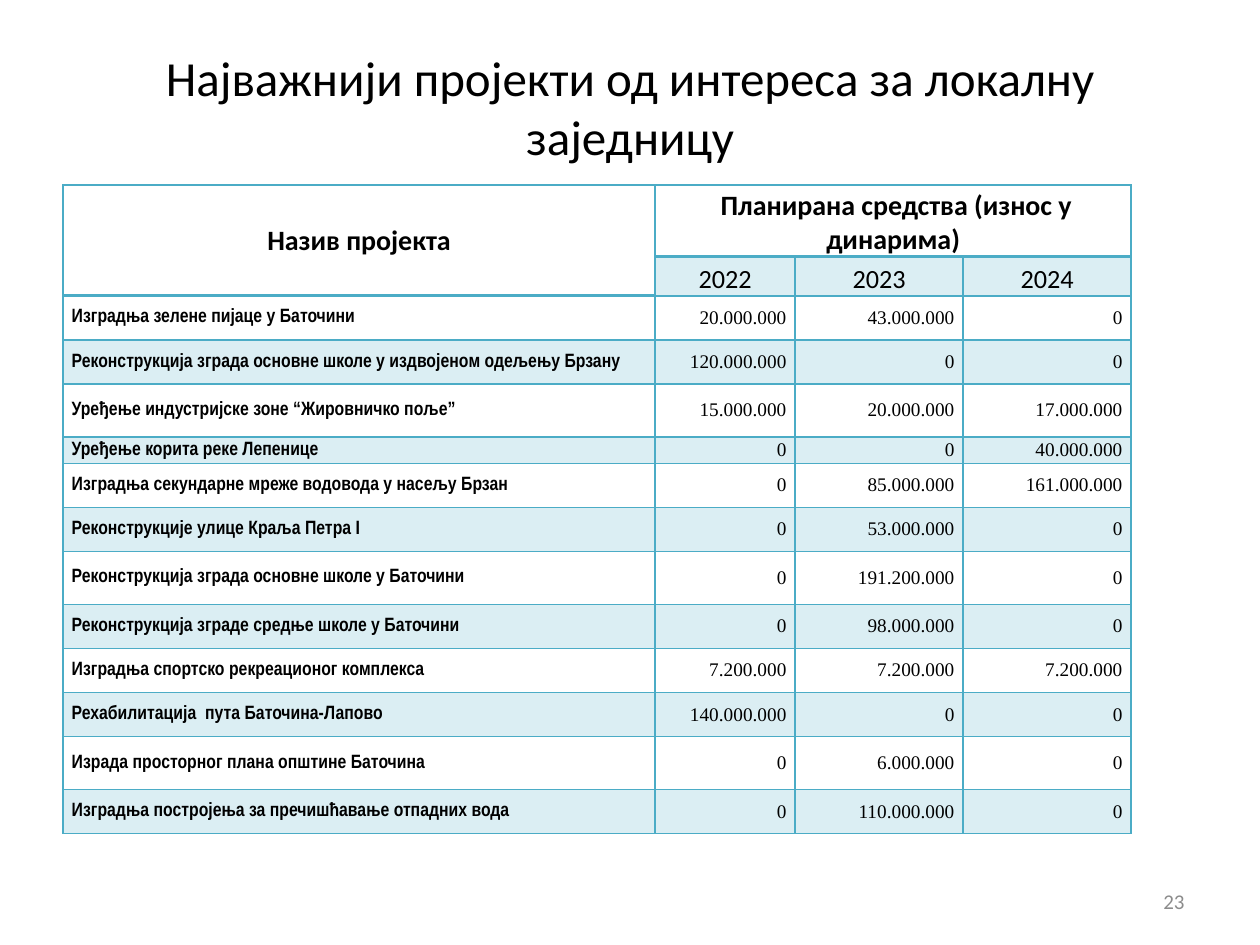
from dataclasses import dataclass

from lxml.etree import SubElement
from pptx import Presentation
from pptx.dml.color import RGBColor
from pptx.enum.text import MSO_ANCHOR, MSO_AUTO_SIZE, PP_ALIGN
from pptx.oxml.ns import qn
from pptx.util import Pt

ACCENT = "4BACC6"
BLACK = "000000"
GREY = "8C8C8C"
COLUMN_WIDTHS = (338.4, 80, 96, 96)
HEADER_HEIGHTS = (41, 22.3)
YEARS = ("2022", "2023", "2024")
NORMAL, TALL, SHORT = 25.2, 30.2, 15.1


@dataclass(frozen=True)
class Style:
    font: str
    size: float
    align: PP_ALIGN
    bold: bool = False
    color: str = BLACK


@dataclass(frozen=True)
class Project:
    name: str
    amounts: tuple[str, str, str]
    height: float = NORMAL


TITLE = Style("Calibri", 28, PP_ALIGN.CENTER)
HEADING = Style("Calibri", 16, PP_ALIGN.CENTER, True)
YEAR = Style("Calibri", 15, PP_ALIGN.CENTER)
NAME = Style("Arial Narrow", 11, PP_ALIGN.LEFT, True)
AMOUNT = Style("Times New Roman", 11, PP_ALIGN.RIGHT)
NUMBER = Style("Calibri", 12, PP_ALIGN.RIGHT, color=GREY)

PROJECTS = (
    Project("Изградња зелене пијаце у Баточини", ("20.000.000", "43.000.000", "0")),
    Project("Реконструкција зграда основне школе у издвојенoм одељењу Брзану",
            ("120.000.000", "0", "0")),
    Project("Уређење индустријске зоне “Жировничко поље”",
            ("15.000.000", "20.000.000", "17.000.000"), TALL),
    Project("Уређење корита реке Лепенице", ("0", "0", "40.000.000"), SHORT),
    Project("Изградња секундарне мреже водовода у насељу Брзан",
            ("0", "85.000.000", "161.000.000")),
    Project("Реконструкције улице Краља Петра I", ("0", "53.000.000", "0")),
    Project("Реконструкција зграда основне школе у Баточини",
            ("0", "191.200.000", "0"), TALL),
    Project("Реконструкција зграде средње школе у Баточини", ("0", "98.000.000", "0")),
    Project("Изградња спортско рекреационог комплексa",
            ("7.200.000", "7.200.000", "7.200.000")),
    Project("Рехабилитација  пута Баточина-Лапово", ("140.000.000", "0", "0")),
    Project("Израда просторног плана општине Баточина", ("0", "6.000.000", "0"), TALL),
    Project("Изградња постројења за пречишћавање отпадних вода",
            ("0", "110.000.000", "0")),
)


def rgb(value: str) -> RGBColor:
    return RGBColor.from_string(value)


def write(frame, text: str, style: Style) -> None:
    para = frame.paragraphs[0]
    para.alignment = style.align
    span = para.add_run()
    span.text = text
    span.font.name = style.font
    span.font.size = Pt(style.size)
    span.font.bold = style.bold
    span.font.color.rgb = rgb(style.color)


def add_border(cell, side: str, width: float) -> None:
    line = SubElement(cell._tc.get_or_add_tcPr(), qn(f"a:ln{side}"), w=str(Pt(width)))
    fill = SubElement(line, qn("a:solidFill"))
    SubElement(fill, qn("a:srgbClr"), val=ACCENT)


def format_cell(cell, shaded: bool, bottom: float = 1, top: float = 1) -> None:
    cell.margin_left = cell.margin_right = Pt(5)
    cell.margin_top = cell.margin_bottom = Pt(0)
    cell.vertical_anchor = MSO_ANCHOR.MIDDLE
    for side, width in (("L", 1), ("R", 1), ("T", top), ("B", bottom)):
        add_border(cell, side, width)
    if shaded:
        cell.fill.solid()
        cell.fill.fore_color.rgb = rgb(ACCENT)
        color = cell._tc.tcPr.find(f"{qn('a:solidFill')}/{qn('a:srgbClr')}")
        SubElement(color, qn("a:alpha"), val="20000")
    else:
        cell.fill.background()


def add_project_table(page) -> None:
    heights = HEADER_HEIGHTS + tuple(project.height for project in PROJECTS)
    table = page.shapes.add_table(
        len(heights), len(COLUMN_WIDTHS), Pt(36), Pt(105.8),
        Pt(sum(COLUMN_WIDTHS)), Pt(sum(heights))).table
    table.first_row = table.horz_banding = False
    for column, width in zip(table.columns, COLUMN_WIDTHS):
        column.width = Pt(width)
    for row, height in zip(table.rows, heights):
        row.height = Pt(height)

    for row_index in range(len(heights)):
        for column_index in range(len(COLUMN_WIDTHS)):
            shaded = row_index % 2 == 1 and (row_index > 1 or column_index > 0)
            heavy_row = 1 if column_index == 0 else 0
            format_cell(table.cell(row_index, column_index), shaded,
                        bottom=2 if row_index in (0, heavy_row) else 1,
                        top=2 if row_index == heavy_row + 1 else 1)

    table.cell(0, 0).merge(table.cell(1, 0))
    table.cell(0, 1).merge(table.cell(0, 3))
    write(table.cell(0, 0).text_frame, "Назив пројекта", HEADING)
    planned = table.cell(0, 1)
    planned.vertical_anchor = MSO_ANCHOR.BOTTOM
    write(planned.text_frame, " Планирана средства (износ у динарима)", HEADING)
    for column_index, year in enumerate(YEARS, 1):
        cell = table.cell(1, column_index)
        cell.vertical_anchor = MSO_ANCHOR.BOTTOM
        write(cell.text_frame, year, YEAR)
    for row_index, project in enumerate(PROJECTS, len(HEADER_HEIGHTS)):
        write(table.cell(row_index, 0).text_frame, project.name, NAME)
        for column_index, amount in enumerate(project.amounts, 1):
            write(table.cell(row_index, column_index).text_frame, amount, AMOUNT)


def place_text(box, bounds: tuple, text: str, style: Style) -> None:
    box.left, box.top, box.width, box.height = (Pt(value) for value in bounds)
    frame = box.text_frame
    frame.word_wrap = True
    frame.auto_size = MSO_AUTO_SIZE.NONE
    frame.vertical_anchor = MSO_ANCHOR.MIDDLE
    write(frame, text, style)


def main() -> None:
    """Build the slide of key local projects and their planned funds."""
    deck = Presentation()
    deck.slide_width, deck.slide_height = Pt(720), Pt(540)
    page = deck.slides.add_slide(deck.slide_layouts[5])
    place_text(page.shapes.title, (36, 21.6, 648, 78.5),
               "Најважнији пројекти од интереса за локалну заједницу", TITLE)
    number_box = page.shapes.add_textbox(Pt(0), Pt(0), Pt(1), Pt(1))
    place_text(number_box, (516, 500.5, 168, 28.75), "23", NUMBER)
    add_project_table(page)
    deck.save("out.pptx")


if __name__ == "__main__":
    main()
